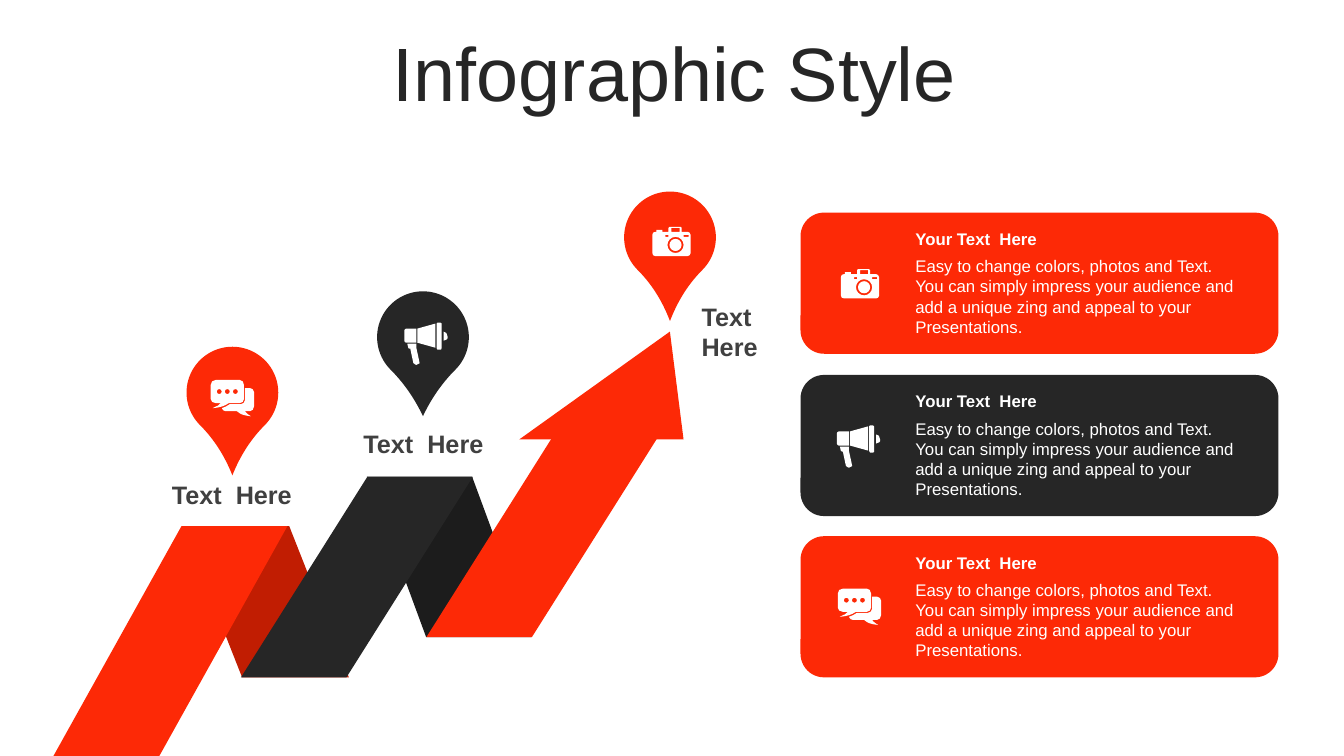
from pptx import Presentation
from pptx.dml.color import RGBColor
from pptx.enum.shapes import MSO_SHAPE
from pptx.enum.text import MSO_ANCHOR, MSO_AUTO_SIZE, PP_ALIGN
from pptx.oxml.ns import qn
from pptx.util import Pt

PX = 9144
RED, DARK, WHITE, GREY = "FD2906", "262626", "FFFFFF", "404040"
SLANT, DROP = MSO_SHAPE.PARALLELOGRAM, MSO_SHAPE.TEAR
HEAD, CARD = MSO_SHAPE.ISOSCELES_TRIANGLE, MSO_SHAPE.ROUNDED_RECTANGLE
LEFT, CENTER = PP_ALIGN.LEFT, PP_ALIGN.CENTER
GROW, FIXED = MSO_AUTO_SIZE.SHAPE_TO_FIT_TEXT, MSO_AUTO_SIZE.NONE


def paint(shape, color):
    shape.shadow.inherit = False
    shape.fill.solid()
    shape.fill.fore_color.rgb = RGBColor.from_string(color)
    shape.line.fill.background()


def write(box, text, size, color, bold, align, fit):
    frame = box.text_frame
    frame.text = text
    frame.word_wrap = True
    frame.auto_size = fit
    line = frame.paragraphs[0]
    line.alignment = align
    font = line.runs[0].font
    font.name, font.size, font.bold = "Arial", Pt(size), bold
    font.color.rgb = RGBColor.from_string(color)


deck = Presentation()
deck.slide_width, deck.slide_height = 1333 * PX, 750 * PX
slide = deck.slides.add_slide(deck.slide_layouts[5])
shapes = slide.shapes

title = shapes.title
title.left, title.top, title.width, title.height = [n * PX for n in (36, 37, 1266, 79)]
write(title, "Infographic Style", 54, DARK, False, CENTER, FIXED)
title.text_frame.vertical_anchor = MSO_ANCHOR.MIDDLE
title.text_frame.paragraphs[0].line_spacing = 0.9
title.text_frame.paragraphs[0].space_before = Pt(0)

ribbon = shapes.add_group_shape()
for kind, box, bend, color, flip in (
    (SLANT, (364, 473, 163, 159), 0.369, "1C1C1C", True),
    (SLANT, (181, 522, 165, 150), 0.394, "C11D02", True),
    (SLANT, (53, 522, 232, 228), 0.557, RED, False),
    (SLANT, (239, 473, 230, 199), 0.63, DARK, False),
    (SLANT, (423, 433, 230, 199), 0.63, RED, False),
    (HEAD, (515, 329, 163, 107), 0.917, RED, False),
):
    part = ribbon.shapes.add_shape(kind, *[n * PX for n in box])
    part.adjustments[0] = bend
    paint(part, color)
    if flip:
        part._element.spPr.xfrm.set("flipV", "1")

for left, top, bend, color in (
    (619, 190, 1.29, RED),
    (374, 289, 1.218, DARK),
    (185, 344, 1.276, RED),
):
    pin = shapes.add_shape(DROP, left * PX, top * PX, 91 * PX, 91 * PX)
    pin.adjustments[0] = bend
    pin.rotation = 135
    paint(pin, color)

for box, align in (
    ((152, 471, 156, 40), CENTER),
    ((686, 294, 91, 71), LEFT),
    ((342, 420, 156, 40), CENTER),
):
    label = shapes.add_textbox(*[n * PX for n in box])
    write(label, "Text  Here", 18, GREY, True, align, GROW)

BODY = (
    "Easy to change colors, photos and Text. You can simply impress your audience "
    "and add a unique zing and appeal to your Presentations."
)
for top, color in ((211, RED), (372, DARK), (532, RED)):
    card = shapes.add_shape(CARD, 794 * PX, top * PX, 474 * PX, 140 * PX)
    paint(card, color)
    for gap, high, text, bold in ((11, 30, "Your Text  Here", True), (38, 91, BODY, False)):
        note = shapes.add_textbox(898 * PX, (top + gap) * PX, 342 * PX, high * PX)
        write(note, text, 12, WHITE, bold, LEFT, GROW)

# Two numbers make a corner, six a curve, three a circle.
CHAT = (
    ((24.5, 11.5, 2.5),),
    ((16.5, 11.5, 2.5),),
    ((8.5, 11.5, 2.5),),
    ((34, 8), (39, 8), (41, 8, 43, 10, 43, 12), (43, 26), (43, 29, 41, 31, 39, 31),
     (34, 31), (35, 32, 35, 33, 40, 36), (31, 35, 30, 34, 26, 31), (15, 31),
     (13, 31, 12, 30, 11, 28), (14, 27, 16, 26, 19, 24), (30, 24),
     (32, 24, 34, 22, 34, 20)),
    ((5, 0), (29, 0), (31, 0, 33, 2, 33, 5), (33, 19), (33, 21, 31, 23, 29, 23),
     (18, 23), (13, 26, 11, 27, 2, 28), (7, 25, 8, 26, 10, 23), (5, 23),
     (2, 23, 0, 21, 0, 19), (0, 5), (0, 2, 2, 0, 5, 0)),
)
HORN = (
    ((12, 21), (12, 23), (12, 24, 12, 24, 12, 25), (15, 39), (16, 40, 15, 41, 14, 41),
     (12, 42), (11, 42, 10, 41, 9, 40), (6, 26), (5, 26, 4, 26, 4, 25), (3, 21)),
    ((39, 9), (41, 9, 43, 11, 43, 14), (44, 16, 41, 18, 39, 18), (39, 15, 39, 12, 39, 9)),
    ((2, 6), (12, 6), (12, 20), (2, 20), (1, 20, 0, 19, 0, 18), (0, 8),
     (0, 7, 1, 6, 2, 6)),
    ((31, 1), (31, 25), (13, 20), (13, 6)),
    ((33, 0), (36, 0), (37, 0, 37, 0, 37, 1), (37, 25), (37, 26, 37, 27, 36, 27),
     (33, 27), (33, 27, 32, 26, 32, 25), (32, 1), (32, 0, 33, 0, 33, 0)),
)
CAMERA = (
    ((23, 18, 6),),
    ((23, 18, 8),),
    ((13, 8), (13, 10), (16, 10), (16, 8)),
    ((31, 8), (31, 10), (36, 10), (36, 8)),
    ((19, 1), (19, 5), (27, 5), (27, 1)),
    ((17, 0), (28, 0), (29, 0, 29, 0, 29, 1), (29, 5), (35, 5), (36, 5, 38, 6, 38, 8),
     (38, 26), (38, 28, 36, 29, 35, 29), (3, 29), (1, 29, 0, 28, 0, 26), (0, 8),
     (0, 6, 1, 5, 3, 5), (4, 5), (4, 3), (10, 3), (10, 5), (16, 5), (16, 1),
     (16, 0, 17, 0, 17, 0)),
)

for icon, left, top in (
    (CHAT, 831, 584), (HORN, 830, 422), (CAMERA, 834, 267),
    (CHAT, 209, 377), (HORN, 401, 320), (CAMERA, 647, 225),
):
    pen, sizes = None, []
    for edge in icon:
        if len(edge[0]) == 3:
            x, y, r = edge[0]
            k = 0.55 * r
            edge = (
                (x, y - r), (x + k, y - r, x + r, y - k, x + r, y),
                (x + r, y + k, x + k, y + r, x, y + r),
                (x - k, y + r, x - r, y + k, x - r, y),
                (x - r, y - k, x - k, y - r, x, y - r),
            )
        spots = [
            (round((left + step[n]) * PX), round((top + step[n + 1]) * PX))
            for step in edge for n in range(0, len(step), 2)
        ]
        sizes += [len(step) // 2 for step in edge[1:]]
        if pen:
            pen.move_to(*spots[0])
        else:
            pen = shapes.build_freeform(*spots[0])
        pen.add_line_segments(spots[1:], close=True)
    sign = pen.convert_to_shape()
    paint(sign, WHITE)
    lines = iter(list(sign._element.iter(qn("a:lnTo"))))
    for size in sizes:
        first = next(lines)
        if size == 3:
            curve = first.makeelement(qn("a:cubicBezTo"), {})
            first.addprevious(curve)
            for line in (first, next(lines), next(lines)):
                curve.append(line[0])
                line.getparent().remove(line)

deck.save("out.pptx")
